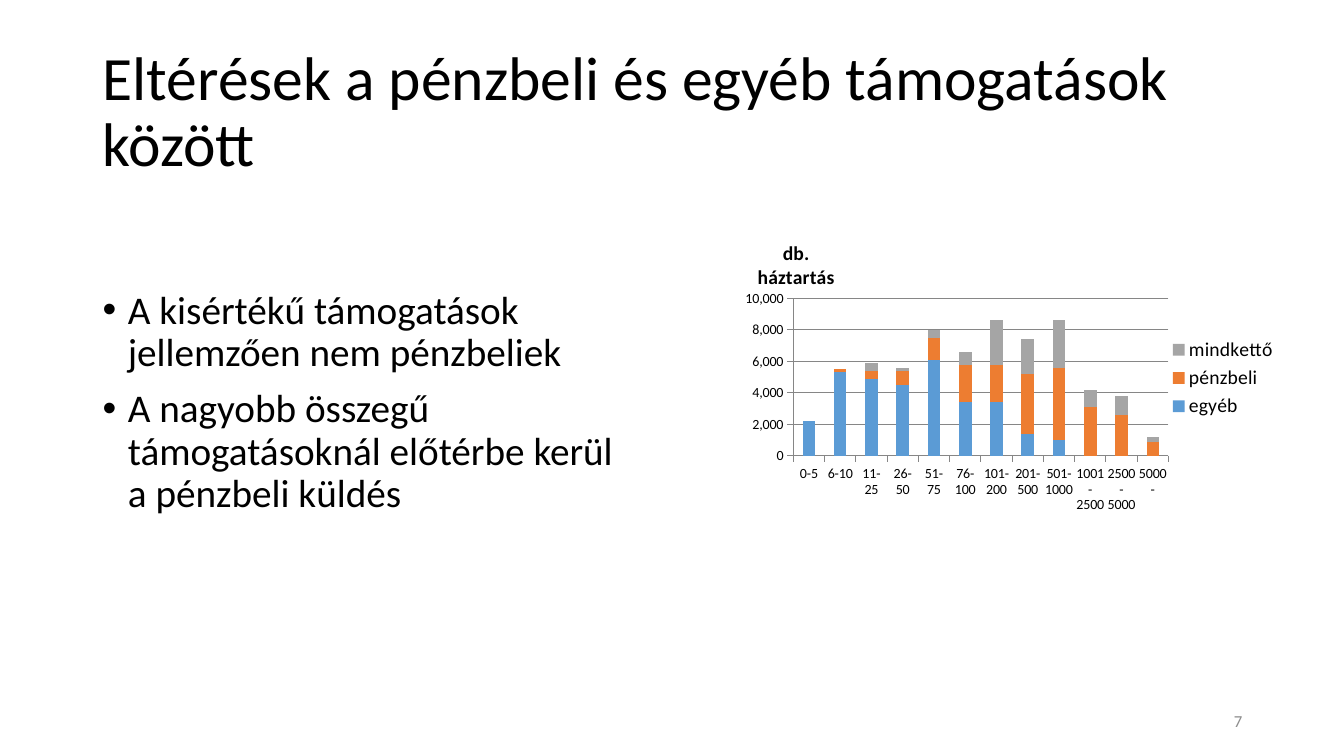
from dataclasses import dataclass

from lxml.etree import SubElement
from pptx import Presentation
from pptx.chart.data import CategoryChartData
from pptx.dml.color import RGBColor
from pptx.enum.chart import XL_CHART_TYPE, XL_LEGEND_POSITION, XL_TICK_MARK
from pptx.enum.text import MSO_ANCHOR, PP_ALIGN
from pptx.oxml.ns import qn
from pptx.util import Emu, Pt

EMU_PER_PX = 9144


@dataclass(frozen=True)
class Theme:
    font: str = "Calibri"
    ink: str = "000000"
    muted: str = "8C8C8C"
    rule: str = "868686"
    series: tuple = ("5B9BD5", "ED7D31", "A5A5A5")
    title: int = 44
    body: int = 28
    label: int = 14
    number: int = 12
    tick: int = 10


def px(length):
    return Emu(length * EMU_PER_PX)


def apply(target, **values):
    for name, value in values.items():
        setattr(target, name, value)


class SlideBuilder:
    """Draws text and charts on one slide in one theme."""

    def __init__(self, page, theme):
        self.page = page
        self.theme = theme

    def style_font(self, font, size, color, bold=False):
        apply(font, name=self.theme.font, size=Pt(size), bold=bold)
        font.color.rgb = RGBColor.from_string(color)

    def text(self, area, lines, size, color, anchor=MSO_ANCHOR.MIDDLE, bullet=False, **para_format):
        frame = self.page.shapes.add_textbox(*map(px, area)).text_frame
        apply(frame, word_wrap=True, vertical_anchor=anchor)
        for index, line in enumerate(lines):
            para = frame.add_paragraph() if index else frame.paragraphs[0]
            apply(para, **para_format)
            if bullet:
                self.add_bullet(para, Pt(10) if index else Pt(0))
            span = para.add_run()
            span.text = line
            self.style_font(span.font, size, color)

    def add_bullet(self, para, space_before):
        para.space_before = space_before
        properties = para.runs[0] if para.runs else para._p.get_or_add_pPr()
        properties.set("marL", str(px(25)))
        properties.set("indent", str(px(-25)))
        SubElement(properties, qn("a:buFont"), typeface="Arial")
        SubElement(properties, qn("a:buChar"), char="•")

    def place(self, parent, position, **layout_values):
        for old in parent.findall(qn("c:layout")):
            parent.remove(old)
        layout = SubElement(parent, qn("c:layout"))
        parent.insert(position, layout)
        manual = SubElement(layout, qn("c:manualLayout"))
        for name, value in layout_values.items():
            SubElement(manual, qn(f"c:{name}"), val=str(value))

    def stacked_chart(self, area, categories, series, axis_title):
        theme = self.theme
        data = CategoryChartData(number_format="#,##0")
        data.categories = categories
        for name, values in series.items():
            data.add_series(name, values)
        frame = self.page.shapes.add_chart(XL_CHART_TYPE.COLUMN_STACKED, *map(px, area), data)
        chart = frame.chart
        apply(chart, has_title=False, has_legend=True)
        self.style_font(chart.font, theme.tick, theme.ink)
        apply(chart.legend, position=XL_LEGEND_POSITION.RIGHT, include_in_layout=False)
        self.style_font(chart.legend.font, theme.label, theme.ink)
        plot = chart.plots[0]
        apply(plot, gap_width=150, overlap=100, vary_by_categories=False)
        for item, color in zip(plot.series, theme.series):
            item.format.fill.solid()
            item.format.fill.fore_color.rgb = RGBColor.from_string(color)
            item.invert_if_negative = False
        self.style_axes(chart, axis_title)
        self.place(chart.element.find(".//" + qn("c:plotArea")), 0, layoutTarget="inner",
                   xMode="edge", yMode="edge", x=0.12, y=0.237, w=0.668, h=0.521)

    def style_axes(self, chart, title):
        theme = self.theme
        axis = chart.value_axis
        apply(axis, minimum_scale=0, maximum_scale=10000, major_unit=2000, has_major_gridlines=True)
        apply(axis.tick_labels, number_format="#,##0", number_format_is_linked=False)
        for part in (axis, axis.major_gridlines, chart.category_axis):
            part.format.line.width = Pt(0.75)
            part.format.line.color.rgb = RGBColor.from_string(theme.rule)
        for each in (axis, chart.category_axis):
            apply(each, major_tick_mark=XL_TICK_MARK.OUTSIDE, minor_tick_mark=XL_TICK_MARK.NONE)
        heading = axis.axis_title
        span = heading.text_frame.paragraphs[0].add_run()
        span.text = title
        self.style_font(span.font, theme.label, theme.ink, bold=True)
        body = heading.element.find(".//" + qn("a:bodyPr"))
        body.set("rot", "0")
        body.set("vert", "horz")
        self.place(heading.element, 1, xMode="edge", yMode="edge", x=0.05, y=0.03)


def main():
    theme = Theme()
    deck = Presentation()
    apply(deck, slide_width=px(1333), slide_height=px(750))
    builder = SlideBuilder(deck.slides.add_slide(deck.slide_layouts[6]), theme)
    builder.text((92, 40, 1150, 145), ["Eltérések a pénzbeli és egyéb támogatások között"],
                 theme.title, theme.ink, line_spacing=0.9)
    builder.text((92, 283, 542, 392),
                 ["A kisértékű támogatások jellemzően nem pénzbeliek",
                  "A nagyobb összegű támogatásoknál előtérbe kerül a pénzbeli küldés"],
                 theme.body, theme.ink, anchor=MSO_ANCHOR.TOP, bullet=True, line_spacing=0.9)
    builder.stacked_chart(
        (720, 225, 557, 300),
        ["0-5", "6-10", "11-25", "26-50", "51-75", "76-100", "101-200", "201-500",
         "501-1000", "1001-2500", "2500-5000", "5000-"],
        {"egyéb": [2200, 5300, 4900, 4500, 6100, 3400, 3400, 1400, 1000, 0, 0, 0],
         "pénzbeli": [0, 200, 500, 900, 1400, 2400, 2400, 3800, 4600, 3100, 2600, 900],
         "mindkettő": [0, 0, 500, 200, 500, 800, 2800, 2200, 3000, 1100, 1200, 300]},
        "db. háztartás")
    builder.text((942, 695, 300, 40), ["7"], theme.number, theme.muted, alignment=PP_ALIGN.RIGHT)
    deck.save("out.pptx")


if __name__ == "__main__":
    main()
